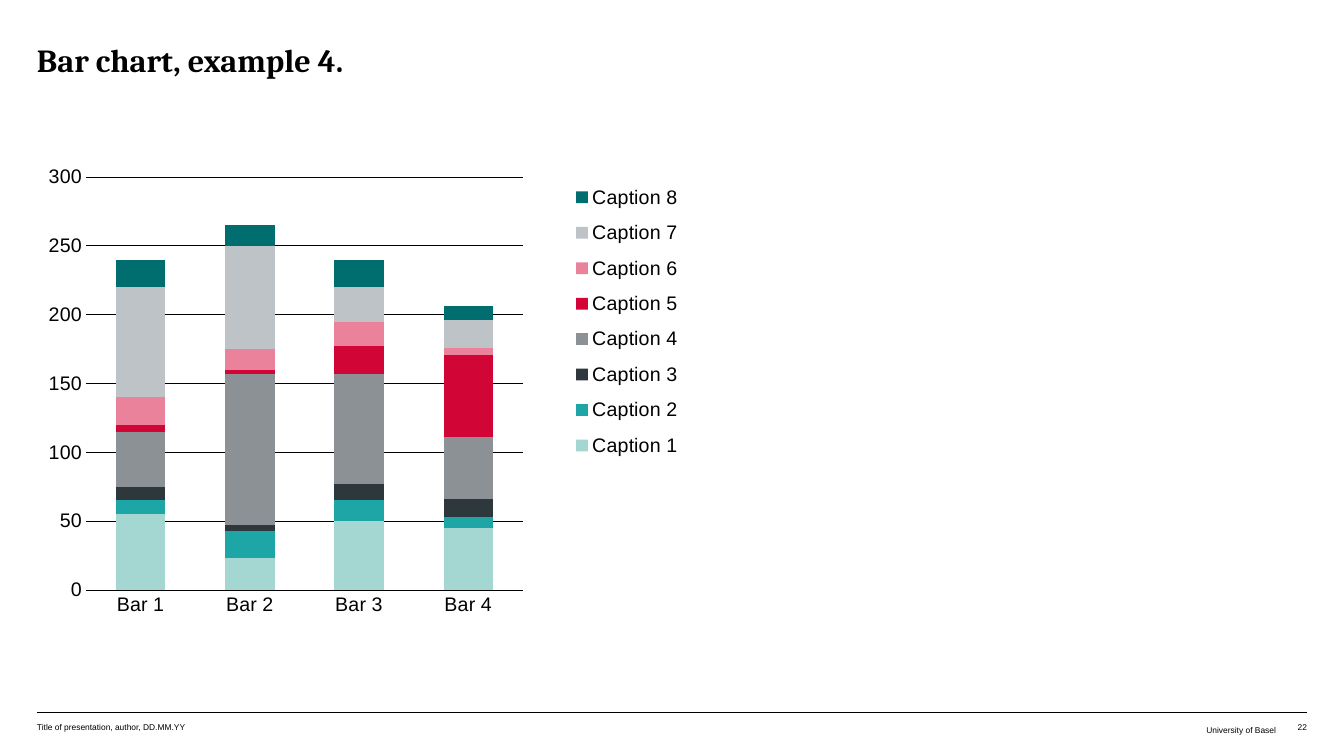
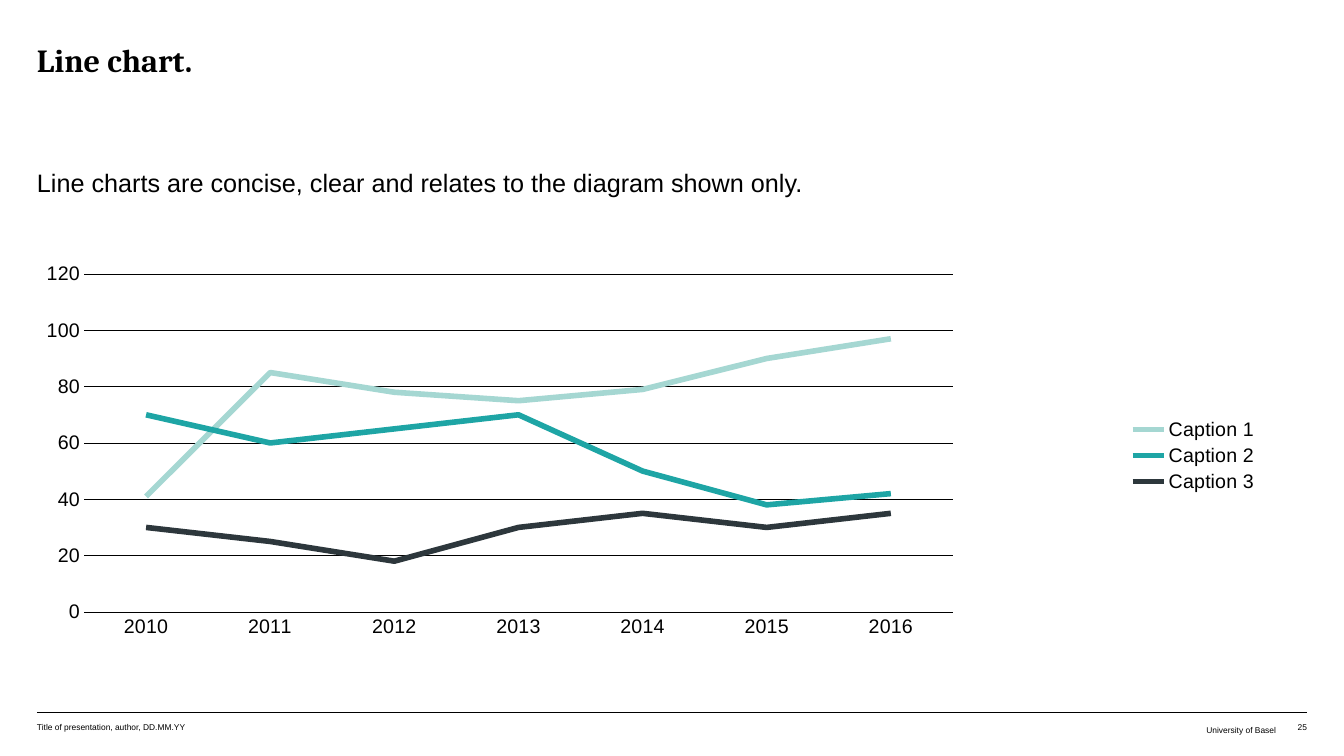
from collections import namedtuple
from dataclasses import dataclass

from lxml import etree
from pptx import Presentation
from pptx.chart import data as cd
from pptx.dml.color import RGBColor
from pptx.enum import chart as ce, shapes, text
from pptx.oxml import ns
from pptx.util import Pt

PX = 914400 / 100.8
Box = namedtuple("Box", "x y w h")


@dataclass(frozen=True)
class Theme:
    ink: str = "000000"
    hues: tuple = ("A5D7D2", "1EA5A5", "2D373C", "8C9196",
                   "D20537", "EB829B", "BEC3C8", "006E6E")
    serif: str = "Cambria"
    sans: str = "Arial"
    title: int = 23
    body: int = 18
    label: int = 14
    foot: int = 6
    hair: float = 0.25
    grid: float = 0.5
    trend: int = 4


T = Theme()
PAGE = Box(0, 0, 1344, 756)
HEAD = Box(37, 44, 1270, 84)
LEAD = Box(37, 167, 770, 66)
FOOT = Box(37, 712, 1270, 28)


def emu(px):
    return round(px * PX)


def rgb(code):
    return RGBColor.from_string(code)


def style(font, size, face=T.sans, bold=False):
    font.name, font.size, font.bold = face, Pt(size), bold
    font.color.rgb = rgb(T.ink)


def stroke(line, width, code=T.ink):
    line.color.rgb = rgb(code)
    line.width = Pt(width)


def place(shape, box):
    shape.left, shape.top, shape.width, shape.height = map(emu, box)


def write(shape, words, size, top=0, align=text.PP_ALIGN.LEFT, lead=None,
          plain=False, **look):
    """Fill a frame with one paragraph; plain removes its bullet."""
    frame = shape.text_frame
    frame.word_wrap = True
    frame.auto_size = text.MSO_AUTO_SIZE.NONE
    frame.vertical_anchor = text.MSO_ANCHOR.TOP
    frame.margin_left = frame.margin_right = frame.margin_bottom = 0
    frame.margin_top = emu(top)
    frame.text = words
    para = frame.paragraphs[0]
    para.alignment = align
    if lead:
        para.line_spacing = Pt(lead)
    if plain:
        para.space_before = Pt(0)
        props = para._p.get_or_add_pPr()
        props.set("marL", "0")
        props.set("indent", "0")
        etree.SubElement(props, ns.qn("a:buNone"))
    style(para.font, size, **look)


def footer(slide, box, number):
    rule = slide.shapes.add_connector(
        shapes.MSO_CONNECTOR.STRAIGHT,
        emu(box.x), emu(box.y), emu(box.x + box.w), emu(box.y))
    stroke(rule.line, T.hair)
    etree.SubElement(rule._element.spPr, ns.qn("a:effectLst"))
    left, right = text.PP_ALIGN.LEFT, text.PP_ALIGN.RIGHT
    end = box.x + box.w
    for words, x, wide, top, align in (
            ("Title of presentation, author, DD.MM.YY", box.x, 318, 2, left),
            ("University of Basel", end - 301, 270, 5, right),
            (number, end - 21, 21, 2, right)):
        note = slide.shapes.add_textbox(
            *map(emu, (x, box.y + 8, wide, box.h - 8)))
        write(note, words, T.foot, top, align)


def base(deck, layout, title, number):
    slide = deck.slides.add_slide(deck.slide_layouts[layout])
    place(slide.shapes.title, HEAD)
    write(slide.shapes.title, title, T.title, lead=25, face=T.serif, bold=True)
    footer(slide, FOOT, number)
    return slide


def layout(box, part, inner=False):
    """Make a manual layout for a part, as shares of the chart's box."""
    root = etree.Element(ns.qn("c:layout"))
    hand = etree.SubElement(root, ns.qn("c:manualLayout"))
    vals = [("layoutTarget", "inner")] if inner else []
    vals += [("xMode", "edge"), ("yMode", "edge"),
             ("x", (part.x - box.x) / box.w), ("y", (part.y - box.y) / box.h),
             ("w", part.w / box.w), ("h", part.h / box.h)]
    for tag, val in vals:
        etree.SubElement(hand, ns.qn("c:" + tag)).set("val", str(val))
    return root


def graph(slide, kind, box, plot, key, cats, rows, top, step):
    """Add a chart whose plot and key boxes are in slide px."""
    data = cd.CategoryChartData()
    data.categories = cats
    for num, vals in enumerate(rows, 1):
        data.add_series(f"Caption {num}", vals)
    chart = slide.shapes.add_chart(kind, *map(emu, box), data).chart
    chart.has_title = False
    style(chart.font, T.label)

    chart.has_legend = True
    legend = chart.legend
    legend.position = ce.XL_LEGEND_POSITION.RIGHT
    legend.include_in_layout = False
    style(legend.font, T.label)
    legend._element.find(ns.qn("c:legendPos")).addnext(layout(box, key))

    area = chart._chartSpace.chart.plotArea
    for old in area.findall(ns.qn("c:layout")):
        area.remove(old)
    area.insert(0, layout(box, plot, inner=True))

    for axis in (chart.category_axis, chart.value_axis):
        axis.major_tick_mark = axis.minor_tick_mark = ce.XL_TICK_MARK.NONE
        style(axis.tick_labels.font, T.label)
    stroke(chart.category_axis.format.line, T.grid)
    scale = chart.value_axis
    scale.minimum_scale, scale.maximum_scale = 0, top
    scale.major_unit = step
    scale.format.line.fill.background()
    scale.has_major_gridlines = True
    stroke(scale.major_gridlines.format.line, T.grid)
    chart.plots[0].vary_by_categories = False
    return chart.plots[0]


def bars(deck):
    slide = base(deck, 5, "Bar chart, example 4.", "22")
    plot = graph(
        slide, ce.XL_CHART_TYPE.COLUMN_STACKED,
        Box(0, 164, 909, 520), Box(86, 177, 437, 413), Box(567, 173, 120, 297),
        [f"Bar {num}" for num in range(1, 5)],
        [(55, 23, 50, 45), (10, 20, 15, 8), (10, 4, 12, 13),
         (40, 110, 80, 45), (5, 3, 20, 60), (20, 15, 18, 5),
         (80, 75, 25, 20), (20, 15, 20, 10)], 300, 50)
    plot.gap_width, plot.overlap = 120, 100
    for row, hue in zip(plot.series, T.hues):
        row.format.fill.solid()
        row.format.fill.fore_color.rgb = rgb(hue)


def lines(deck):
    slide = base(deck, 1, "Line chart.", "25")
    body = slide.placeholders[1]
    place(body, LEAD)
    write(body, "Line charts are concise, clear and relates to the diagram "
          "shown only.", T.body, lead=22, plain=True)
    plot = graph(
        slide, ce.XL_CHART_TYPE.LINE,
        Box(13, 263, 1256, 385), Box(84, 274, 869, 338),
        Box(1012, 274, 140, 101),
        [str(year) for year in range(2010, 2017)],
        [(41, 85, 78, 75, 79, 90, 97), (70, 60, 65, 70, 50, 38, 42),
         (30, 25, 18, 30, 35, 30, 35)], 120, 20)
    for row, hue in zip(plot.series, T.hues):
        row.smooth = False
        row.marker.style = ce.XL_MARKER_STYLE.NONE
        stroke(row.format.line, T.trend, hue)


def main():
    deck = Presentation()
    deck.slide_width, deck.slide_height = emu(PAGE.w), emu(PAGE.h)
    bars(deck)
    lines(deck)
    deck.save("out.pptx")


if __name__ == "__main__":
    main()
